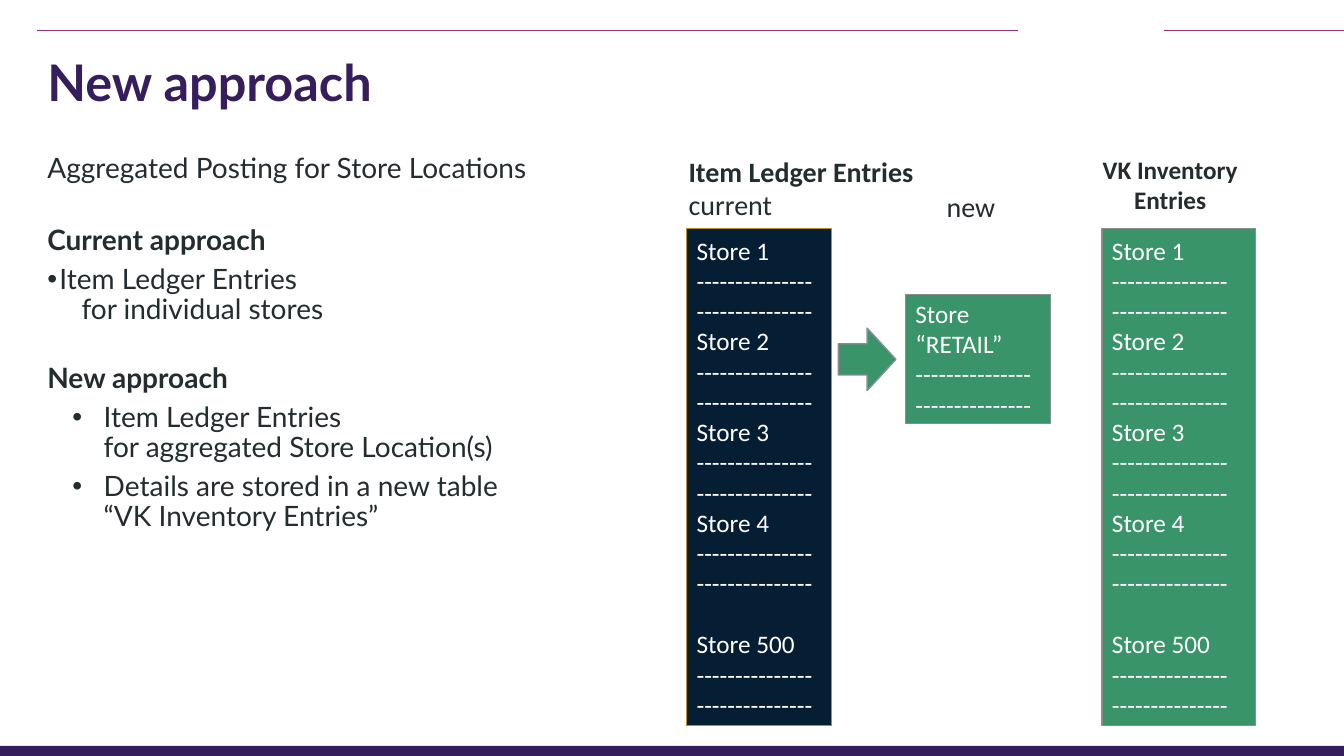
from dataclasses import dataclass

import lxml.etree
import pptx
import pptx.dml.color
import pptx.enum.shapes
import pptx.enum.text
import pptx.oxml.ns
import pptx.util

Kind = pptx.enum.shapes.MSO_SHAPE
Align = pptx.enum.text.PP_ALIGN
Anchor = pptx.enum.text.MSO_ANCHOR
WIDE = pptx.util.Inches(13.33)
HIGH = pptx.util.Inches(7.5)


@dataclass(frozen=True)
class Theme:
    purple: str = "361D5C"
    plum: str = "943267"
    navy: str = "051E33"
    gold: str = "B58D2C"
    green: str = "399569"
    gray: str = "888E90"
    ink: str = "242C2F"
    white: str = "FFFFFF"
    head: str = "Lato"
    plain: str = "Calibri"
    title: int = 36
    body: int = 20
    store: int = 18


THEME = Theme()


@dataclass(frozen=True)
class Area:
    """Left, top, width and height in percent of the slide."""
    left: float
    top: float
    width: float
    height: float

    def box(self) -> tuple[int, int, int, int]:
        return (across(self.left), down(self.top),
                across(self.width), down(self.height))


@dataclass(frozen=True)
class Line:
    """One paragraph; left and hang are in percent of the slide width."""
    text: str
    bold: bool = False
    before: float = 0
    left: float = 0
    hang: float = 0


@dataclass(frozen=True)
class Style:
    font: str
    size: int
    color: str
    space: float = 1
    align: Align = Align.LEFT


@dataclass(frozen=True)
class Label:
    area: Area
    lines: tuple[Line, ...]
    style: Style
    wrap: bool = True


@dataclass(frozen=True)
class Block:
    kind: Kind
    area: Area
    fill: str
    edge: str | None = None
    lines: tuple[Line, ...] = ()


def across(share: float) -> int:
    return round(WIDE * share / 100)


def down(share: float) -> int:
    return round(HIGH * share / 100)


def rgb(code: str) -> pptx.dml.color.RGBColor:
    return pptx.dml.color.RGBColor.from_string(code)


def indent(para, line: Line) -> None:
    """Set the left margin, and a bullet where the line hangs."""
    props = para._p.get_or_add_pPr()
    props.set("marL", str(across(line.left)))
    props.set("indent", str(-across(line.hang)))
    if line.hang:
        qn = pptx.oxml.ns.qn
        lxml.etree.SubElement(props, qn("a:buFont"), typeface="Arial")
        lxml.etree.SubElement(props, qn("a:buChar"), char="•")


def write(frame, lines: tuple[Line, ...], style: Style) -> None:
    frame.text = "\n".join(line.text for line in lines)
    for para, line in zip(frame.paragraphs, lines):
        indent(para, line)
        para.alignment = style.align
        para.line_spacing = style.space
        para.space_before = pptx.util.Pt(line.before)
        for run in para.runs:
            run.font.name = style.font
            run.font.size = pptx.util.Pt(style.size)
            run.font.bold = line.bold
            run.font.color.rgb = rgb(style.color)


def draw_rule(slide, start: float, end: float) -> None:
    rule = slide.shapes.add_connector(
        pptx.enum.shapes.MSO_CONNECTOR.STRAIGHT,
        across(start), down(4), across(end), down(4))
    rule.line.color.rgb = rgb(THEME.plum)
    rule.line.width = pptx.util.Pt(0.5)
    lxml.etree.SubElement(rule._element.spPr, pptx.oxml.ns.qn("a:effectLst"))


def draw_block(slide, block: Block) -> None:
    shape = slide.shapes.add_shape(block.kind, *block.area.box())
    shape.shadow.inherit = False
    shape.fill.solid()
    shape.fill.fore_color.rgb = rgb(block.fill)
    if block.edge:
        shape.line.color.rgb = rgb(block.edge)
        shape.line.width = pptx.util.Pt(1)
    else:
        shape.line.fill.background()
    if block.lines:
        frame = shape.text_frame
        frame.word_wrap = True
        frame.vertical_anchor = Anchor.MIDDLE
        write(frame, block.lines, Style(THEME.plain, THEME.store, THEME.white))


def draw_label(slide, label: Label) -> None:
    frame = slide.shapes.add_textbox(*label.area.box()).text_frame
    frame.word_wrap = label.wrap
    write(frame, label.lines, label.style)


DASH = Line("-" * 15)
STORES = tuple(
    line for num in (1, 2, 3, 4, 500)
    for line in (Line(f"Store {num}", before=22 if num == 500 else 0), DASH, DASH))
RETAIL = (Line("Store “RETAIL”"), DASH, DASH)
BODY = (
    Line("Aggregated Posting for Store Locations"),
    Line("Current approach", bold=True, before=30),
    Line("Item Ledger Entries", before=6, left=0.9, hang=0.9),
    Line("for individual stores", left=2.55),
    Line("New approach", bold=True, before=28),
    Line("Item Ledger Entries\vfor aggregated Store Location(s)",
         before=6, left=4.2, hang=2.33),
    Line("Details are stored in a new table\v“VK Inventory Entries”",
         before=6, left=4.2, hang=2.33),
)

TITLE = Style(THEME.head, THEME.title, THEME.purple, 0.9)
TEXT = Style(THEME.head, THEME.body, THEME.ink, 0.9)
NOTE = Style(THEME.plain, THEME.body, THEME.ink)
TABLE = Style(THEME.plain, THEME.store, THEME.ink, align=Align.CENTER)

RULES = ((2.78, 75.77), (86.57, 100))
BLOCKS = (
    Block(Kind.RECTANGLE, Area(0, 98.67, 100, 1.33), THEME.purple),
    Block(Kind.RECTANGLE, Area(51.09, 30.27, 10.8, 65.73),
          THEME.navy, THEME.gold, STORES),
    Block(Kind.RECTANGLE, Area(67.37, 38.93, 10.8, 17.07),
          THEME.green, THEME.gray, RETAIL),
    Block(Kind.RIGHT_ARROW, Area(62.38, 43.4, 4.28, 8.27),
          THEME.green, THEME.gray),
    Block(Kind.RECTANGLE, Area(82, 30.27, 11.4, 65.73),
          THEME.green, THEME.gray, STORES),
)
LABELS = (
    Label(Area(2.78, 7.07, 59.64, 8.53), (Line("New approach", bold=True),), TITLE),
    Label(Area(2.78, 19.73, 52.51, 74), BODY, TEXT),
    Label(Area(50.49, 19.73, 19.2, 10.27),
          (Line("Item Ledger Entries", bold=True), Line("current")), NOTE),
    Label(Area(81.25, 19.73, 11.63, 9.47),
          (Line("VK Inventory\vEntries", bold=True),), TABLE, wrap=False),
    Label(Area(69.69, 24.4, 22.06, 5.87), (Line("new"),), NOTE),
)


def main() -> None:
    deck = pptx.Presentation()
    deck.slide_width, deck.slide_height = WIDE, HIGH
    slide = deck.slides.add_slide(deck.slide_layouts[6])
    for start, end in RULES:
        draw_rule(slide, start, end)
    for block in BLOCKS:
        draw_block(slide, block)
    for label in LABELS:
        draw_label(slide, label)
    deck.save("out.pptx")


if __name__ == "__main__":
    main()
